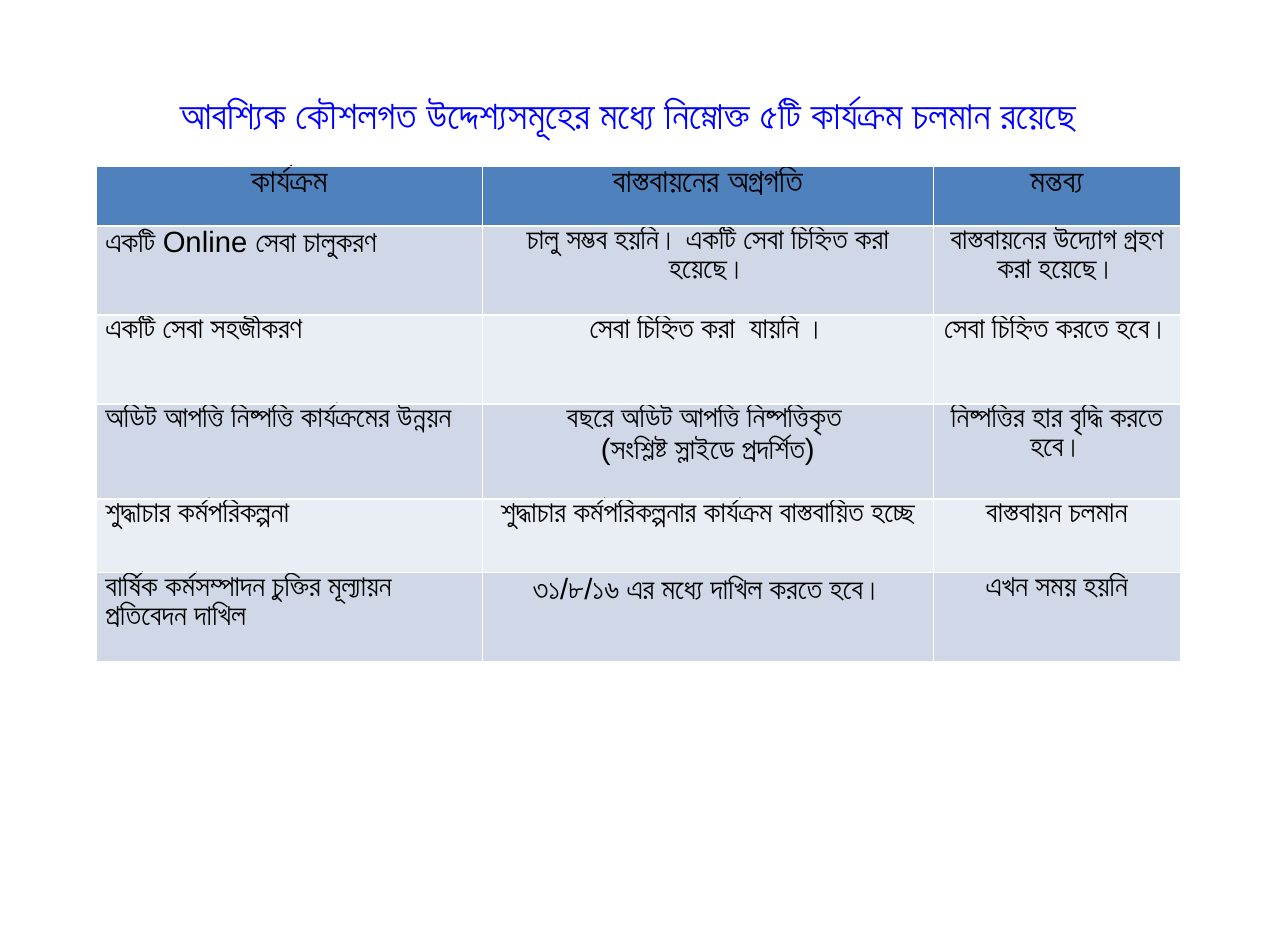
from pptx import Presentation
from pptx import util as u
from pptx.dml.color import RGBColor
from pptx.enum import text

PX = u.Inches(1) // 100
FONT = "Arial"
BLACK, BLUE = "000000", "0000FF"
HEADER_FILL, BAND_FILLS = "4F81BD", ("E9EDF4", "D0D8E8")

TITLE = "আবশ্যিক কৌশলগত উদ্দেশ্যসমূহের মধ্যে নিম্নোক্ত ৫টি কার্যক্রম চলমান রয়েছে "
COLUMN_WIDTHS = (330, 385, 211)
ROW_HEIGHTS = (51, 76, 76, 81, 63, 76)
ROWS = (
    ("কার্যক্রম", "বাস্তবায়নের অগ্রগতি", "মন্তব্য"),
    ("একটি Online সেবা চালুকরণ ", "চালু সম্ভব হয়নি। একটি সেবা চিহ্নিত করা হয়েছে।",
     "বাস্তবায়নের উদ্যোগ গ্রহণ করা হয়েছে।"),
    ("একটি সেবা সহজীকরণ", "সেবা চিহ্নিত করা  যায়নি ।", "সেবা চিহ্নিত করতে হবে।"),
    ("অডিট আপত্তি নিষ্পত্তি কার্যক্রমের উন্নয়ন",
     "বছরে অডিট আপত্তি নিষ্পত্তিকৃত \n(সংশ্লিষ্ট স্লাইডে প্রদর্শিত)",
     "নিষ্পত্তির হার বৃদ্ধি করতে হবে।"),
    ("শুদ্ধাচার কর্মপরিকল্পনা", "শুদ্ধাচার কর্মপরিকল্পনার কার্যক্রম বাস্তবায়িত হচ্ছে",
     "বাস্তবায়ন চলমান"),
    ("বার্ষিক কর্মসম্পাদন চুক্তির মূল্যায়ন প্রতিবেদন দাখিল",
     "৩১/৮/১৬ এর মধ্যে দাখিল করতে হবে।", "এখন সময় হয়নি"),
)


def color(value):
    """Turn a hex string into a colour."""
    return RGBColor.from_string(value)


def write(frame, content, size, ink, bold, align):
    """Fill a text frame with evenly formatted paragraphs."""
    frame.text = content
    for paragraph in frame.paragraphs:
        paragraph.alignment = align
        font = paragraph.font
        font.name, font.size, font.bold = FONT, u.Pt(size), bold
        font.color.rgb = color(ink)


def add_title(slide, left, top, width, height):
    """Place the heading in the title placeholder."""
    title = slide.shapes.title
    title.left, title.top = left * PX, top * PX
    title.width, title.height = width * PX, height * PX
    frame = title.text_frame
    frame.vertical_anchor = text.MSO_ANCHOR.MIDDLE
    frame.word_wrap = True
    write(frame, TITLE, 24, BLUE, False, text.PP_ALIGN.CENTER)


def add_progress_table(slide, left, top):
    """Place the table of activities, progress and remarks."""
    table = slide.shapes.add_table(
        len(ROWS), len(COLUMN_WIDTHS), left * PX, top * PX,
        sum(COLUMN_WIDTHS) * PX, sum(ROW_HEIGHTS) * PX).table
    for column, width in zip(table.columns, COLUMN_WIDTHS):
        column.width = width * PX
    for row, height in zip(table.rows, ROW_HEIGHTS):
        row.height = height * PX
    for row_index, row in enumerate(ROWS):
        header = row_index == 0
        fill = HEADER_FILL if header else BAND_FILLS[row_index % 2]
        for column_index, content in enumerate(row):
            cell = table.cell(row_index, column_index)
            cell.margin_left = cell.margin_right = 8 * PX
            cell.margin_top = cell.margin_bottom = 0
            cell.fill.solid()
            cell.fill.fore_color.rgb = color(fill)
            centred = header or column_index > 0
            align = text.PP_ALIGN.CENTER if centred else text.PP_ALIGN.LEFT
            write(cell.text_frame, content, 20 if header else 18, BLACK, header, align)


def main():
    """Build the slide and save it."""
    presentation = Presentation()
    presentation.slide_width, presentation.slide_height = 1100 * PX, 800 * PX
    slide = presentation.slides.add_slide(presentation.slide_layouts[0])
    subtitle = slide.placeholders[1].element
    subtitle.getparent().remove(subtitle)
    add_title(slide, 73, 62, 935, 71)
    add_progress_table(slide, 82, 142)
    presentation.save("out.pptx")


if __name__ == "__main__":
    main()
